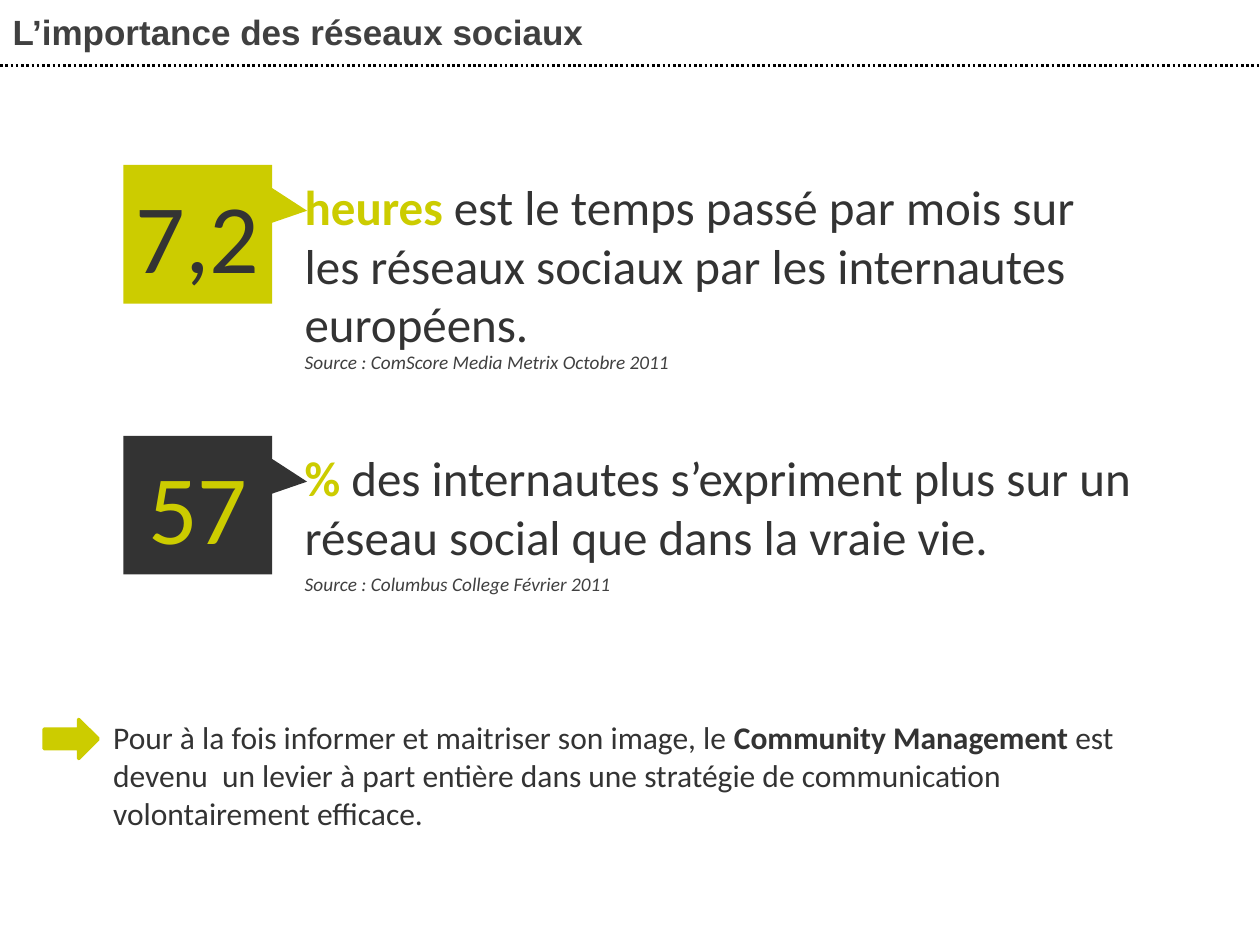
from lxml import etree
from pptx import Presentation
from pptx.dml.color import RGBColor
from pptx.enum.dml import MSO_LINE
from pptx.enum.shapes import MSO_CONNECTOR, MSO_SHAPE
from pptx.enum.text import MSO_ANCHOR, MSO_AUTO_SIZE, PP_ALIGN
from pptx.oxml.ns import qn
from pptx.util import Inches, Pt

LINE = MSO_CONNECTOR.STRAIGHT
CALLOUT = MSO_SHAPE.RECTANGULAR_CALLOUT
ARROW = MSO_SHAPE.RIGHT_ARROW
DOTTED = MSO_LINE.ROUND_DOT  # stored as sysDot
MIDDLE, TOP = MSO_ANCHOR.MIDDLE, MSO_ANCHOR.TOP
LEFT, CENTER = PP_ALIGN.LEFT, PP_ALIGN.CENTER
FIT = MSO_AUTO_SIZE.SHAPE_TO_FIT_TEXT

COLORS = {"lime": "CCCC00", "dark": "333333", "grey": "404040", "black": "000000"}

# top, number, fill, number colour, highlight, statement, width, source, its top and width
FIGURES = [
    (1.31, "7,2", "lime", "dark", "heures ",
     "est le temps passé par mois sur les réseaux sociaux par les internautes européens.",
     6.77, "Source : ComScore Media Metrix Octobre 2011", 2.73, 3.12),
    (3.46, "57", "dark", "lime", "%",
     " des internautes s’expriment plus sur un réseau social que dans la vraie vie.",
     6.85, "Source : Columbus College Février 2011", 4.49, 2.65),
]
CONCLUSION = [
    ("Pour à la fois informer et maitriser son image, le ", "dark", False),
    ("Community Management ", "dark", True),
    ("est devenu  un levier à part entière dans une stratégie de communication "
     "volontairement efficace.", "dark", False),
]


def rgb(name):
    return RGBColor.from_string(COLORS[name])


def style(r, size, color, bold=False, italic=False, font="Calibri"):
    r.font.name, r.font.size = font, Pt(size)
    r.font.bold, r.font.italic = bold, italic
    r.font.color.rgb = rgb(color)


def add_title(s, text):
    title = s.shapes.title
    title.left, title.top, title.width, title.height = (
        Inches(0), Inches(0), Inches(10), Inches(0.5))
    tf = title.text_frame
    tf.text = text
    tf.vertical_anchor = MIDDLE
    tf.margin_right = Inches(0.2)
    p = tf.paragraphs[0]
    p.alignment = LEFT
    style(p.runs[0], 20, "grey", bold=True, font="Arial")


def add_rule(s, y):
    line = s.shapes.add_connector(LINE, Inches(0), Inches(y), Inches(10), Inches(y))
    line.line.color.rgb = rgb("black")
    line.line.width = Pt(1.5)
    line.line.dash_style = DOTTED
    etree.SubElement(line._element.spPr, qn("a:effectLst"))


def add_text(s, x, y, w, h, parts, size, italic=False, wrap=True):
    """Add a text box; parts holds (text, colour, bold) for each run."""
    tf = s.shapes.add_textbox(Inches(x), Inches(y), Inches(w), Inches(h)).text_frame
    tf.word_wrap = wrap
    tf.vertical_anchor = TOP
    if not wrap:
        tf.auto_size = FIT
    p = tf.paragraphs[0]
    for text, color, bold in parts:
        r = p.add_run()
        r.text = text
        style(r, size, color, bold, italic)
    return p


def add_shape(s, kind, x, y, w, h, fill):
    sp = s.shapes.add_shape(kind, Inches(x), Inches(y), Inches(w), Inches(h))
    sp.shadow.inherit = False
    sp.fill.solid()
    sp.fill.fore_color.rgb = rgb(fill)
    sp.line.fill.background()
    return sp


def add_callout(s, y, number, fill, color):
    sp = add_shape(s, CALLOUT, 0.98, y, 1.18, 1.1, fill)
    sp.adjustments[0], sp.adjustments[1] = 0.735, -0.17
    tf = sp.text_frame
    tf.text = number
    tf.vertical_anchor = MIDDLE
    tf.margin_left = tf.margin_right = Inches(0.08)
    tf.margin_top = tf.margin_bottom = Inches(0.04)
    p = tf.paragraphs[0]
    p.alignment = CENTER
    style(p.runs[0], 56, color)


def add_arrow(s):
    sp = add_shape(s, ARROW, 0.35, 5.71, 0.43, 0.31, "lime")
    sp.line.color.rgb = rgb("lime")
    sp.line.width = Pt(2)


def main():
    prs = Presentation()
    prs.slide_width, prs.slide_height = Inches(10), Inches(7.5)
    s = prs.slides.add_slide(prs.slide_layouts[5])

    # Header
    add_rule(s, 0.52)
    add_title(s, "L’importance des réseaux sociaux")

    # Key figures with their sources
    for y, number, fill, color, highlight, statement, w, source, source_y, source_w in FIGURES:
        add_text(s, 2.32, y + 0.04, w, 1.02,
                 [(highlight, "lime", True), (statement, "dark", False)], 28)
        add_callout(s, y, number, fill, color)
        add_text(s, 2.32, source_y, source_w, 0.29, [(source, "grey", False)], 11,
                 italic=True, wrap=False)

    # Conclusion, indented to clear the arrow
    p = add_text(s, 0.5, 5.65, 9, 1.01, CONCLUSION, 18)
    p._p.get_or_add_pPr().set("marL", str(Inches(0.3)))
    add_arrow(s)

    prs.save("out.pptx")


if __name__ == "__main__":
    main()
